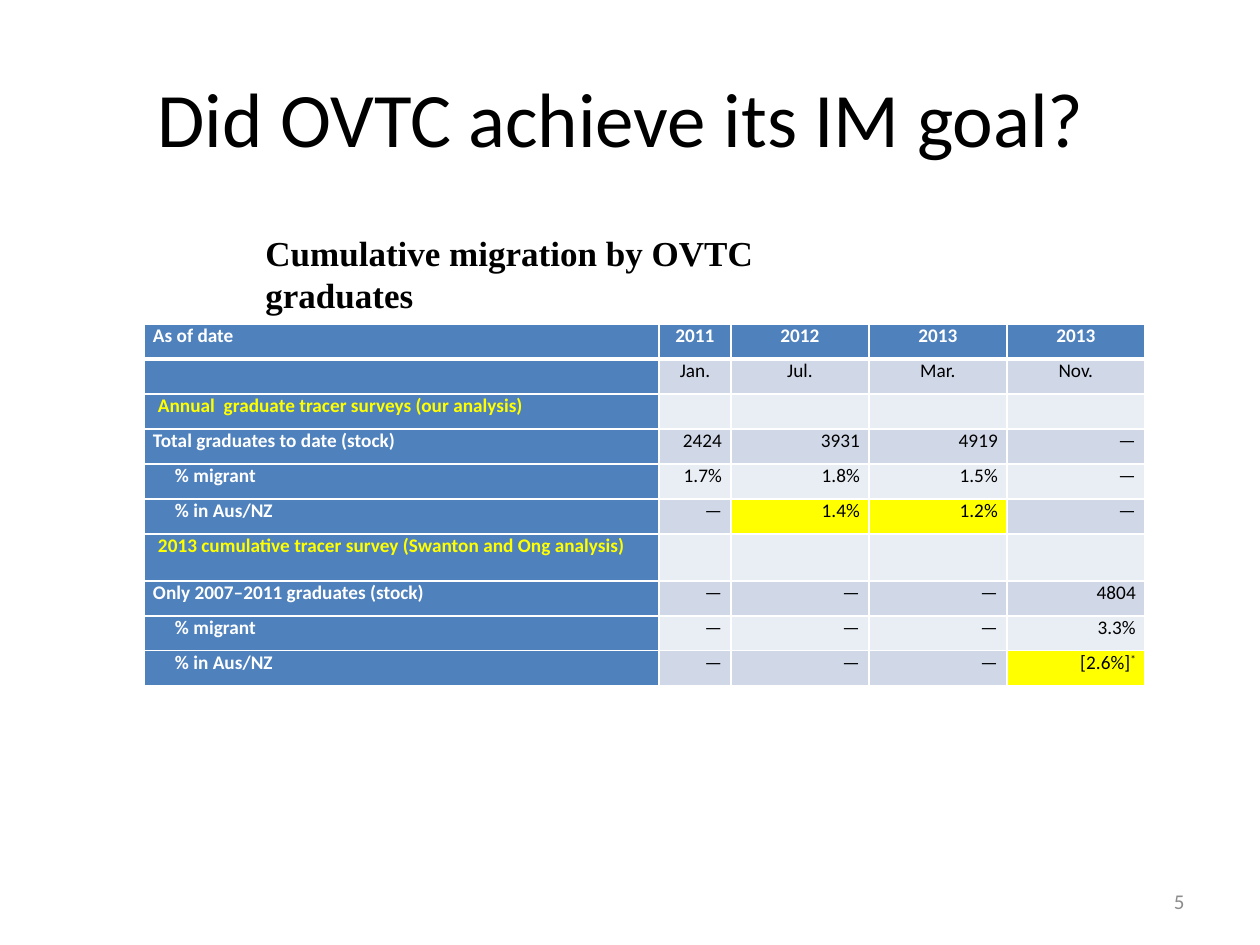
from lxml.etree import SubElement
from pptx import Presentation
from pptx.dml.color import RGBColor
from pptx.enum.text import MSO_ANCHOR, PP_ALIGN
from pptx.oxml.ns import qn
from pptx.util import Pt

SCALE = 914400 / 126
BLACK = RGBColor(0x00, 0x00, 0x00)
WHITE = RGBColor(0xFF, 0xFF, 0xFF)
GREY = RGBColor(0x8C, 0x8C, 0x8C)
BLUE = RGBColor(0x4F, 0x81, 0xBD)
DARK = RGBColor(0xD0, 0xD8, 0xE8)
PALE = RGBColor(0xE9, 0xED, 0xF4)
YELLOW = RGBColor(0xFF, 0xFF, 0x00)

COLS = [515, 72, 138, 138, 138]
LOW, TALL = 35, 47
INSET, STEP, NUDGE = 9, 22, 5
NONE = ["", "", "", ""]
DATA = [
    ("As of date", ["2011", "2012", "2013", "2013"]),
    ("", ["Jan.", "Jul.", "Mar.", "Nov."]),
    ("Annual  graduate tracer surveys (our analysis)", NONE),
    ("Total graduates to date (stock)", ["2424", "3931", "4919", "—"]),
    ("% migrant", ["1.7%", "1.8%", "1.5%", "—"]),
    ("% in Aus/NZ", ["—", "1.4%", "1.2%", "—"]),
    ("2013 cumulative tracer survey (Swanton and Ong analysis)", NONE),
    ("Only 2007–2011 graduates (stock)", ["—", "—", "—", "4804"]),
    ("% migrant", ["—", "—", "—", "3.3%"]),
    ("% in Aus/NZ", ["—", "—", "—", "[2.6%]*"]),
]
HEADS = (2, 6)
MARKED = {(5, 2), (5, 3), (9, 4)}


def px(n):
    return round(n * SCALE)


def place(shape, box):
    shape.left, shape.top, shape.width, shape.height = map(px, box)


def write(para, text, size, color, bold=False, face="Calibri"):
    run = para.add_run()
    run.text = text
    font = run.font
    font.size, font.bold, font.name = Pt(size), bold, face
    font.color.rgb = color
    return run


def edge(cell, row):
    props = cell._tc.get_or_add_tcPr()
    for side in ("L", "R", "T", "B"):
        thick = (row, side) in ((0, "B"), (1, "T"))
        line = SubElement(props, qn("a:ln" + side), w=str(Pt(3 if thick else 1)))
        fill = SubElement(line, qn("a:solidFill"))
        SubElement(fill, qn("a:srgbClr"), val=str(WHITE))


def style(cell, row, col):
    edge(cell, row)
    cell.margin_left = cell.margin_right = px(INSET)
    cell.margin_top = cell.margin_bottom = 0
    cell.fill.solid()
    if (row, col) in MARKED:
        color = YELLOW
    elif row == 0 or col == 0:
        color = BLUE
    else:
        color = DARK if row % 2 else PALE
    cell.fill.fore_color.rgb = color


def label(cell, row, text):
    if row in HEADS:
        cell.margin_left = px(INSET + NUDGE)
    elif text.startswith("%"):
        cell.margin_left = px(INSET + STEP)
    write(cell.text_frame.paragraphs[0], text, 11, YELLOW if row in HEADS else WHITE, True)


def value(cell, row, text):
    para = cell.text_frame.paragraphs[0]
    para.alignment = PP_ALIGN.CENTER if row < 2 else PP_ALIGN.RIGHT
    main, star, _ = text.partition("*")
    write(para, main, 11, BLACK if row else WHITE, row == 0)
    if star:
        run = write(para, star, 11, BLACK)
        run._r.get_or_add_rPr().set("baseline", "30000")


def grid(slide, box):
    table = slide.shapes.add_table(len(DATA), len(COLS), *map(px, box)).table
    table.horz_banding = False
    for col, wide in zip(table.columns, COLS):
        col.width = px(wide)
    for i, (name, vals) in enumerate(DATA):
        table.rows[i].height = px(TALL if i == HEADS[1] else LOW)
        for j, text in enumerate([name, *vals]):
            cell = table.cell(i, j)
            style(cell, i, j)
            if not text:
                para = cell.text_frame.paragraphs[0]
                SubElement(para._p, qn("a:endParaRPr"), sz="1100")
            elif j:
                value(cell, i, text)
            else:
                label(cell, i, text)


def title(slide, box):
    shape = slide.shapes.title
    place(shape, box)
    frame = shape.text_frame
    frame.vertical_anchor = MSO_ANCHOR.MIDDLE
    para = frame.paragraphs[0]
    para.alignment = PP_ALIGN.CENTER
    write(para, "Did OVTC achieve its IM goal? ", 44, BLACK)


def note(slide, box, anchor):
    frame = slide.shapes.add_textbox(*map(px, box)).text_frame
    frame.word_wrap = True
    frame.vertical_anchor = anchor
    return frame.paragraphs[0]


def caption(slide, box):
    para = note(slide, box, MSO_ANCHOR.TOP)
    write(para, "Cumulative migration by OVTC graduates", 20, BLACK, True, "Times New Roman")


def number(slide, box):
    para = note(slide, box, MSO_ANCHOR.MIDDLE)
    para.alignment = PP_ALIGN.RIGHT
    write(para, "5", 12, GREY)


def main():
    deck = Presentation()
    deck.slide_width, deck.slide_height = px(1260), px(945)
    slide = deck.slides.add_slide(deck.slide_layouts[5])
    title(slide, (63, 38, 1134, 158))
    grid(slide, (144, 324, sum(COLS), LOW * 9 + TALL))
    caption(slide, (253, 225, 667, 93))
    number(slide, (903, 876, 294, 50))
    deck.save("out.pptx")


if __name__ == "__main__":
    main()
